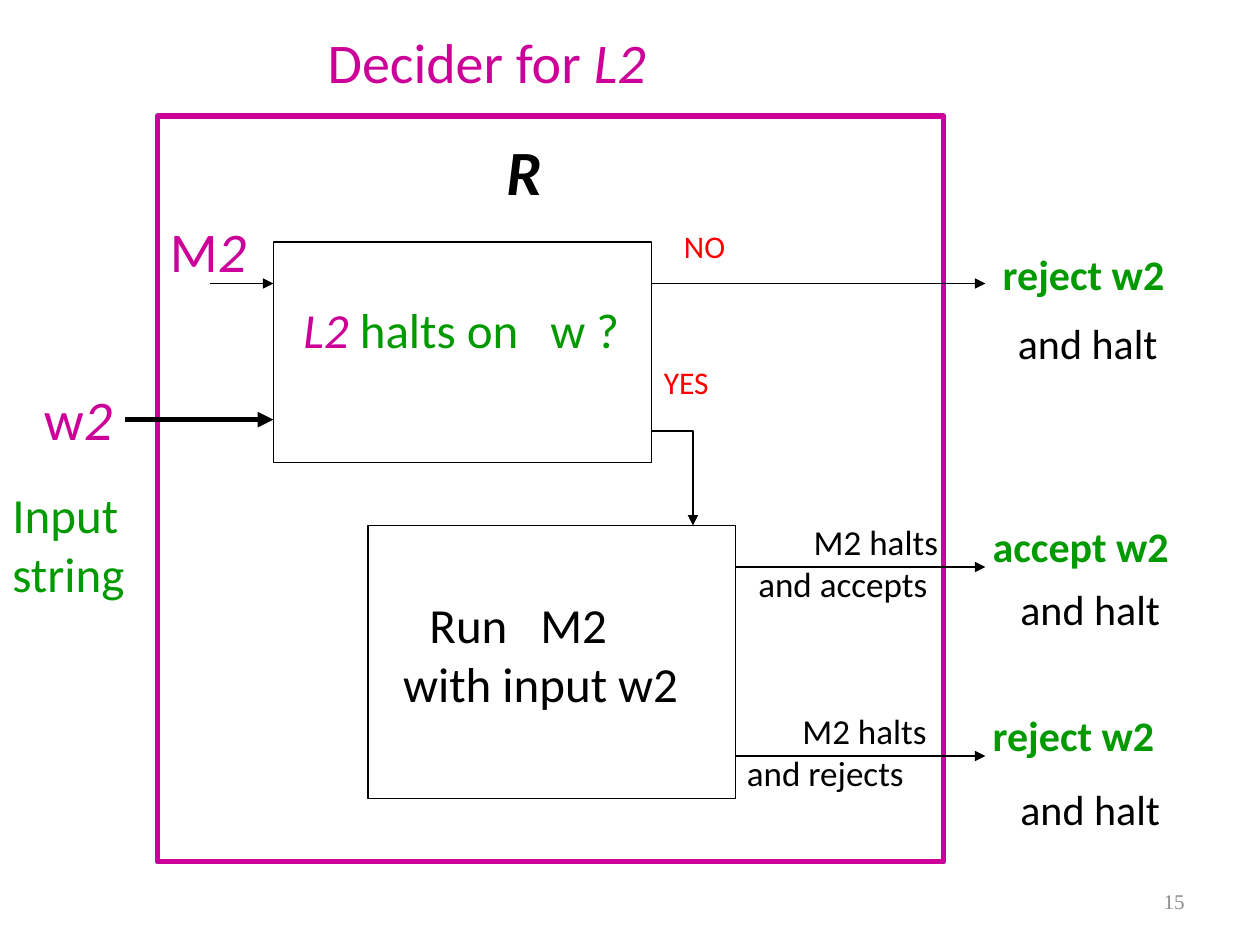
"""Build the slide that shows the decider for L2 as a block diagram."""
from lxml.etree import SubElement
from pptx import Presentation
from pptx.dml.color import RGBColor
from pptx.enum.shapes import MSO_CONNECTOR, MSO_SHAPE
from pptx.enum.text import MSO_ANCHOR, MSO_AUTO_SIZE, PP_ALIGN
from pptx.oxml.ns import qn
from pptx.util import Inches, Pt

COLORS = {"black": "000000", "green": "009900", "magenta": "CC0099",
          "red": "FF0000", "gray": "8C8C8C"}


def write(sp, paragraphs, size, wrap=False, font="Calibri"):
    tf = sp.text_frame
    tf.word_wrap = wrap
    tf.auto_size = MSO_AUTO_SIZE.SHAPE_TO_FIT_TEXT
    tf.vertical_anchor = MSO_ANCHOR.TOP
    for i, (layout, runs) in enumerate(paragraphs):
        p = tf.add_paragraph() if i else tf.paragraphs[0]
        p.alignment = layout.get("align", PP_ALIGN.LEFT)
        pPr = p._p.get_or_add_pPr()
        if "indent" in layout:
            pPr.set("marL", str(Inches(layout["indent"])))
        if "tabs" in layout:
            tabs = SubElement(pPr, qn("a:tabLst"))
            for pos in layout["tabs"]:
                SubElement(tabs, qn("a:tab"), pos=str(Inches(pos)), algn="l")
        for text, color, style in runs:
            r = p.add_run()
            r.text = text
            r.font.color.rgb = RGBColor.from_string(COLORS[color])
            formats = {"name": font, "size": Pt(size),
                       "bold": "b" in style, "italic": "i" in style}
            for name, value in formats.items():
                setattr(r.font, name, value)


def draw_arrow(sp, width):
    sp.line.color.rgb = RGBColor.from_string(COLORS["black"])
    sp.line.width = Pt(width)
    SubElement(sp.line._get_or_add_ln(), qn("a:tailEnd"), type="triangle")


prs = Presentation()
prs.slide_width, prs.slide_height = Inches(10), Inches(7.5)
s = prs.slides.add_slide(prs.slide_layouts[5])

title = s.shapes.title
title.left, title.top, title.width, title.height = map(Inches, (2.5, 0.17, 2.75, 0.64))
write(title, [({}, [("Decider for ", "magenta", ""), ("L2", "magenta", "i")])], 32)

boxes = [
    (2.17, 1.92, 3, 1.75, "black", 0.75),
    (2.92, 4.17, 2.92, 2.17, "black", 0.75),
    (1.25, 0.92, 6.24, 5.92, "magenta", 3),
]
for *place, color, width in boxes:
    sp = s.shapes.add_shape(MSO_SHAPE.RECTANGLE, *map(Inches, place))
    sp.shadow.inherit = False
    sp.fill.background()
    sp.line.color.rgb = RGBColor.from_string(COLORS[color])
    sp.line.width = Pt(width)

arrows = [
    (1.67, 2.17, 2.25, 0.75),
    (0.99, 2.17, 3.33, 3),
    (5.17, 7.82, 2.25, 0.75),
    (5.83, 7.82, 4.5, 0.75),
    (5.83, 7.82, 6, 0.75),
]
for x1, x2, y, width in arrows:
    arrow = s.shapes.add_connector(MSO_CONNECTOR.STRAIGHT, *map(Inches, (x1, y, x2, y)))
    draw_arrow(arrow, width)
    SubElement(arrow._element.spPr, qn("a:effectLst"))

builder = s.shapes.build_freeform(Inches(5.17), Inches(3.42))
builder.add_line_segments([(Inches(5.5), Inches(3.42)), (Inches(5.5), Inches(4.17))], close=False)
yes_path = builder.convert_to_shape()
yes_path.shadow.inherit = False
yes_path.fill.background()
draw_arrow(yes_path, 0.75)

labels = [
    (5.17, 2.83, 1.07, 0.63, 18, "red", "", ["YES"]),
    (5.33, 1.75, 0.91, 0.63, 18, "red", "", ["NO"]),
    (7.86, 1.92, 1.5, 0.5, 24, "green", "b", ["reject w2"]),
    (7.78, 4.08, 1.61, 0.5, 24, "green", "b", ["accept w2"]),
    (7.78, 5.58, 1.5, 0.5, 24, "green", "b", ["reject w2"]),
    (7.98, 2.47, 1.32, 0.5, 24, "black", "", ["and halt"]),
    (8, 4.58, 1.32, 0.5, 24, "black", "", ["and halt"]),
    (8, 6.17, 1.32, 0.5, 24, "black", "", ["and halt"]),
    (0, 3.8, 1.28, 1.13, 28, "green", "", ["Input", "string"]),
    (3.92, 1, 0.49, 0.71, 36, "black", "bi", ["R"]),
]
for *place, size, color, style, lines in labels:
    sp = s.shapes.add_textbox(*map(Inches, place))
    write(sp, [({}, [(line, color, style)]) for line in lines], size)

for x, y, width, letter in [(0.25, 3, 0.75, "w"), (1.25, 1.67, 0.81, "M")]:
    sp = s.shapes.add_textbox(*map(Inches, (x, y, width, 0.64)))
    write(sp, [({}, [(letter, "magenta", ""), ("2", "magenta", "i")])], 32)

for x, y, outcome in [(5.92, 4.08, "and accepts"), (5.83, 5.58, "and rejects")]:
    sp = s.shapes.add_textbox(*map(Inches, (x, y, 1.64, 0.77)))
    write(sp, [({"indent": 0.44}, [("M2 halts", "black", "")]),
               ({}, [(outcome, "black", "")])], 20)

question = s.shapes.add_textbox(*map(Inches, (2.31, 2.33, 2.77, 0.57)))
write(question, [({"tabs": [1.96]}, [("L2 ", "magenta", "i"),
                                     ("halts on\tw ?", "green", "")])], 28, wrap=True)

run_step = s.shapes.add_textbox(*map(Inches, (3, 4.67, 2.58, 1.04)))
write(run_step, [({"tabs": [0.31, 1.19]}, [("\tRun\tM2", "black", "")]),
                 ({"align": PP_ALIGN.CENTER}, [("with input w2", "black", "")])], 28, wrap=True)

number = s.shapes.add_textbox(*map(Inches, (7.17, 6.95, 2.33, 0.4)))
write(number, [({"align": PP_ALIGN.RIGHT}, [("15", "gray", "")])], 12,
      wrap=True, font="Times New Roman")
number.text_frame.auto_size = MSO_AUTO_SIZE.NONE
number.text_frame.vertical_anchor = MSO_ANCHOR.MIDDLE

prs.save("out.pptx")
